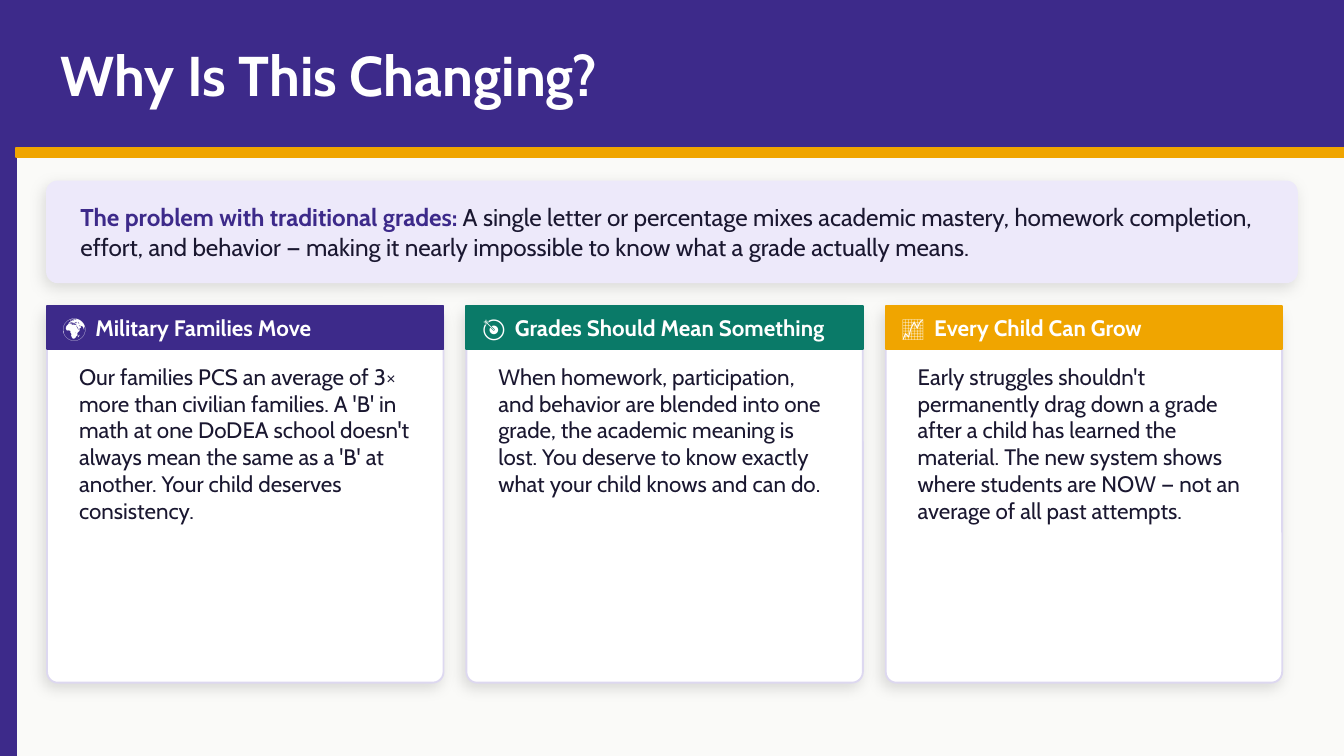
from lxml.etree import SubElement
from pptx import Presentation
from pptx.dml.color import RGBColor
from pptx.enum.shapes import MSO_SHAPE
from pptx.enum.text import MSO_ANCHOR, MSO_AUTO_SIZE, PP_ALIGN
from pptx.oxml.ns import qn
from pptx.util import Inches, Pt

COLORS = {
    "purple": "3D2A8A", "gold": "F0A500", "green": "0A7A68",
    "lavender": "EDE9FA", "border": "DDD8F0", "paper": "FAFAF8",
    "white": "FFFFFF", "ink": "1A1730",
}


def add_panel(left, top, width, height, fill, line=None, radius=None):
    """Draw a plain rectangle, or a rounded one with a soft shadow."""
    kind = MSO_SHAPE.RECTANGLE if radius is None else MSO_SHAPE.ROUNDED_RECTANGLE
    panel = slide.shapes.add_shape(
        kind, Inches(left), Inches(top), Inches(width), Inches(height))
    panel.fill.solid()
    panel.fill.fore_color.rgb = RGBColor.from_string(COLORS[fill])
    panel.line.color.rgb = RGBColor.from_string(COLORS[line or fill])
    panel.line.width = Pt(1)
    panel.shadow.inherit = False
    if radius is not None:
        panel.adjustments[0] = radius / min(width, height)
        effects = panel._element.spPr.find(qn("a:effectLst"))
        shadow = SubElement(effects, qn("a:outerShdw"), blurRad=str(Pt(8)),
                            dist=str(Pt(3)), dir=str(135 * 60000),
                            algn="bl", rotWithShape="0")
        black = SubElement(shadow, qn("a:srgbClr"), val="000000")
        SubElement(black, qn("a:alpha"), val="12000")
    return panel


def write(text, left, top, width, height, size=12, color="ink", bold=False,
          lead="", anchor=MSO_ANCHOR.MIDDLE, inset=True, tab=None, holder=None):
    """Write text, after an optional bold purple lead, in a box or placeholder."""
    area = [Inches(v) for v in (left, top, width, height)]
    box = holder or slide.shapes.add_textbox(*area)
    box.left, box.top, box.width, box.height = area
    frame = box.text_frame
    frame.word_wrap = True
    frame.auto_size = MSO_AUTO_SIZE.NONE
    frame.vertical_anchor = anchor
    if not inset:
        frame.margin_left = frame.margin_right = 0
        frame.margin_top = frame.margin_bottom = 0
    paragraph = frame.paragraphs[0]
    if tab:
        stops = SubElement(paragraph._p.get_or_add_pPr(), qn("a:tabLst"))
        SubElement(stops, qn("a:tab"), pos=str(Inches(tab)), algn="l")
    paragraph.alignment = PP_ALIGN.LEFT
    for words, shade, strong in ((lead, "purple", True), (text, color, bold)):
        if words:
            run = paragraph.add_run()
            run.text = words
            run.font.name = "Cabin"
            run.font.size = Pt(size)
            run.font.bold = strong
            run.font.color.rgb = RGBColor.from_string(COLORS[shade])


presentation = Presentation()
presentation.slide_width = Inches(10)
presentation.slide_height = Inches(5.625)
slide = presentation.slides.add_slide(presentation.slide_layouts[5])
slide.background.fill.solid()
slide.background.fill.fore_color.rgb = RGBColor.from_string(COLORS["paper"])

# Side bar, header band with title, and gold rule
add_panel(0, 0, 0.12, 5.625, "purple")
header = add_panel(0.12, 0, 9.88, 1.1, "purple")
title = slide.shapes.title
header._element.addnext(title._element)
write("Why Is This Changing?", 0.35, 0, 9.3, 1.1, size=30, color="white",
      bold=True, holder=title)
add_panel(0.12, 1.1, 9.88, 0.07, "gold")

# Problem statement
add_panel(0.35, 1.35, 9.3, 0.75, "lavender", radius=0.08)
write("A single letter or percentage mixes academic mastery, homework "
      "completion, effort, and behavior — making it nearly impossible to know "
      "what a grade actually means.",
      0.5, 1.35, 9, 0.75, size=13, lead="The problem with traditional grades: ")

# Three reason cards
reasons = [
    ("🌍", "Military Families Move", "purple",
     "Our families PCS an average of 3× more than civilian families. A 'B' in "
     "math at one DoDEA school doesn't always mean the same as a 'B' at "
     "another. Your child deserves consistency."),
    ("🎯", "Grades Should Mean Something", "green",
     "When homework, participation, and behavior are blended into one grade, "
     "the academic meaning is lost. You deserve to know exactly what your "
     "child knows and can do."),
    ("📈", "Every Child Can Grow", "gold",
     "Early struggles shouldn't permanently drag down a grade after a child "
     "has learned the material. The new system shows where students are NOW — "
     "not an average of all past attempts."),
]
card_top, card_width, card_gap = 2.28, 2.95, 0.17
for index, (icon, heading, accent, explanation) in enumerate(reasons):
    left = 0.35 + index * (card_width + card_gap)
    add_panel(left, card_top, card_width, 2.8, "white", line="border", radius=0.08)
    add_panel(left, card_top, card_width, 0.32, accent)
    write(f"{icon}\t{heading}", left + 0.12, card_top, 2.71, 0.32,
          color="white", bold=True, inset=False, tab=0.24)
    write(explanation, left + 0.14, card_top + 0.37, 2.68, 2.35,
          anchor=MSO_ANCHOR.TOP)

presentation.save("out.pptx")
